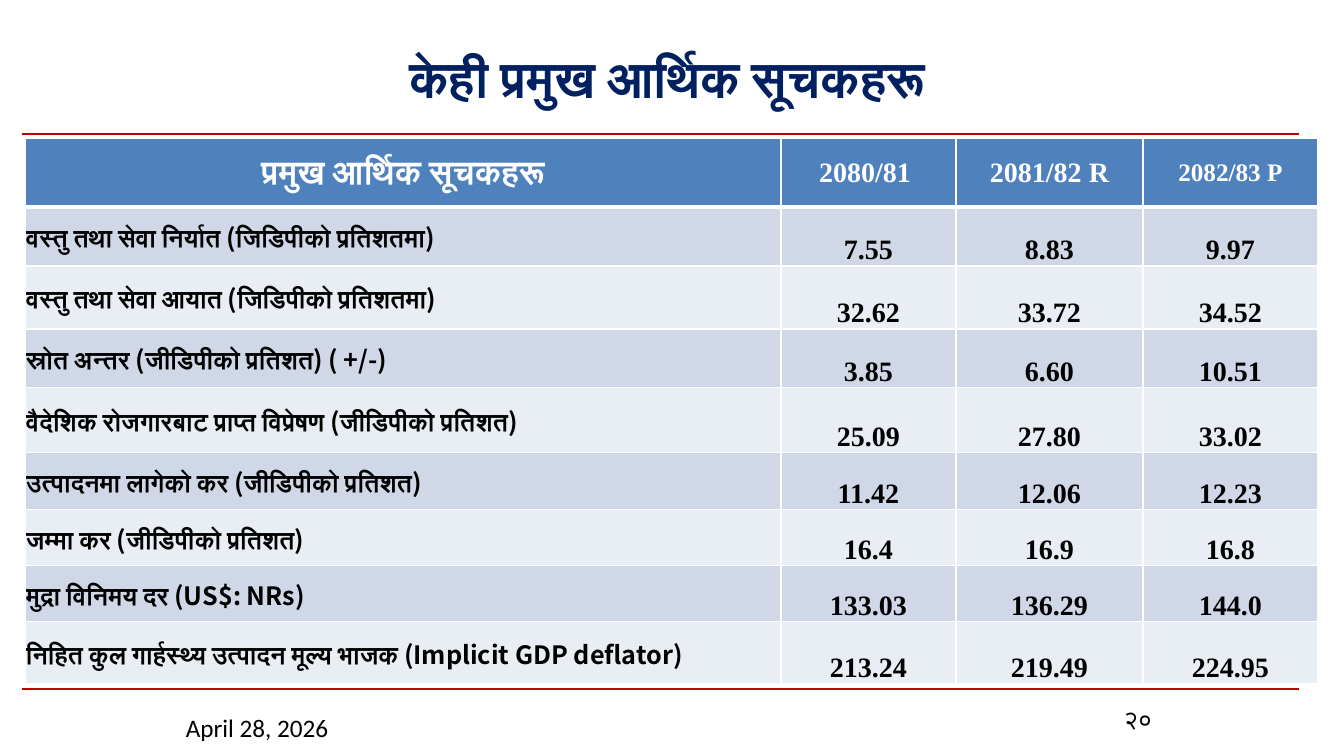
from lxml.etree import SubElement
from pptx import Presentation
from pptx.dml.color import RGBColor
from pptx.enum.shapes import MSO_CONNECTOR
from pptx.enum.text import MSO_ANCHOR, PP_ALIGN
from pptx.oxml.ns import qn
from pptx.util import Pt

TITLE = "केही प्रमुख आर्थिक सूचकहरू"
DATE = "April 28, 2026"
PAGE = "२०"
HEADINGS = ["प्रमुख आर्थिक सूचकहरू", "2080/81 ", "2081/82 R", "2082/83 P"]
HEADING_SIZES = [24, 20, 20, 18]
INDICATORS = [
    ("वस्तु तथा सेवा निर्यात (जिडिपीको प्रतिशतमा)", "7.55", "8.83", "9.97"),
    ("वस्तु तथा सेवा आयात (जिडिपीको प्रतिशतमा)", "32.62", "33.72", "34.52"),
    ("स्रोत अन्तर (जीडिपीको प्रतिशत) ( +/-)", "3.85", "6.60", "10.51"),
    ("वैदेशिक रोजगारबाट प्राप्त विप्रेषण (जीडिपीको प्रतिशत)", "25.09", "27.80", "33.02"),
    ("उत्पादनमा लागेको कर (जीडिपीको प्रतिशत)", "11.42", "12.06", "12.23"),
    ("जम्मा कर (जीडिपीको प्रतिशत)", "16.4", "16.9", "16.8"),
    ("मुद्रा विनिमय दर (US$: NRs)", "133.03", "136.29", "144.0"),
    ("निहित कुल गार्हस्थ्य उत्पादन मूल्य भाजक (Implicit GDP deflator)", "213.24", "219.49", "224.95"),
]
COLUMN_WIDTHS = [756, 175, 187, 175]
ROW_HEIGHTS = [69, 59, 63, 59, 65, 57, 56, 56, 62]
TABLE_LEFT, TABLE_TOP = 25, 138
RULE_LEFT, RULE_RIGHT = 22, 1299
RULE_TOPS = [134, 689]
COLORS = {
    "rule": "C00000",
    "title": "002060",
    "heading": "4F81BD",
    "odd": "D0D8E8",
    "even": "E9EDF4",
    "white": "FFFFFF",
    "black": "000000",
}


def px(length):
    return round(length * 914400 / 100.8)


def color(name):
    return RGBColor.from_string(COLORS[name])


def add_text(paragraph, text, size, font, tint, bold=False, align=PP_ALIGN.LEFT):
    paragraph.alignment = align
    run = paragraph.add_run()
    run.text = text
    run.font.size = Pt(size)
    run.font.bold = bold
    run.font.color.rgb = color(tint)
    run.font.name = font
    SubElement(run.font._element, qn("a:cs"), typeface=font)


def add_box(slide, bounds, anchor, *text, **style):
    frame = slide.shapes.add_textbox(*map(px, bounds)).text_frame
    frame.word_wrap = True
    frame.vertical_anchor = anchor
    add_text(frame.paragraphs[0], *text, **style)


def add_rule(slide, top):
    rule = slide.shapes.add_connector(
        MSO_CONNECTOR.STRAIGHT, px(RULE_LEFT), px(top), px(RULE_RIGHT), px(top))
    rule.line.color.rgb = color("rule")
    rule.line.width = Pt(1.5)
    SubElement(rule._element.spPr, qn("a:effectLst"))


def set_borders(cell, top, bottom):
    properties = cell._tc.get_or_add_tcPr()
    widths = {"a:lnL": 1, "a:lnR": 1, "a:lnT": top, "a:lnB": bottom}
    for position, (side, width) in enumerate(widths.items()):
        border = SubElement(properties, qn(side), w=str(Pt(width)))
        fill = SubElement(border, qn("a:solidFill"))
        SubElement(fill, qn("a:srgbClr"), val=COLORS["white"])
        properties.insert(position, border)


def fill_cell(cell, row, column, text):
    is_heading, is_label = row == 0, column == 0
    cell.margin_left = cell.margin_right = cell.margin_top = px(1)
    cell.margin_bottom = 0
    cell.fill.solid()
    cell.fill.fore_color.rgb = color("heading" if is_heading else "odd" if row % 2 else "even")
    set_borders(cell, 3 if row == 1 else 1, 3 if is_heading else 1)
    cell.vertical_anchor = MSO_ANCHOR.MIDDLE if is_heading or is_label else MSO_ANCHOR.BOTTOM
    if is_heading:
        size, font = HEADING_SIZES[column], "Calibri" if is_label else "Times New Roman"
    else:
        size, font = (18, "Noto Sans CJK JP") if is_label else (20, "Times New Roman")
    add_text(cell.text_frame.paragraphs[0], text, size, font,
             "white" if is_heading else "black", bold=True,
             align=PP_ALIGN.LEFT if is_label and not is_heading else PP_ALIGN.CENTER)


def add_indicators(slide):
    rows = [HEADINGS, *INDICATORS]
    table = slide.shapes.add_table(
        len(rows), len(HEADINGS), px(TABLE_LEFT), px(TABLE_TOP),
        px(sum(COLUMN_WIDTHS)), px(sum(ROW_HEIGHTS))).table
    for column, width in zip(table.columns, COLUMN_WIDTHS):
        column.width = px(width)
    for row, height in zip(table.rows, ROW_HEIGHTS):
        row.height = px(height)
    for row, texts in enumerate(rows):
        for column, text in enumerate(texts):
            fill_cell(table.cell(row, column), row, column, text)


def main():
    deck = Presentation()
    deck.slide_width, deck.slide_height = px(1344), px(756)
    slide = deck.slides.add_slide(deck.slide_layouts[6])
    for top in RULE_TOPS:
        add_rule(slide, top)
    add_box(slide, (176, 707, 219, 41), MSO_ANCHOR.TOP, DATE, 18, "Calibri", "black")
    add_indicators(slide)
    add_box(slide, (1109, 698, 58, 48), MSO_ANCHOR.TOP, PAGE, 18, "Roboto", "black",
            align=PP_ALIGN.CENTER)
    add_box(slide, (176, 25, 983, 104), MSO_ANCHOR.MIDDLE, TITLE, 36, "Calibri", "title",
            bold=True, align=PP_ALIGN.CENTER)
    deck.save("out.pptx")


if __name__ == "__main__":
    main()
